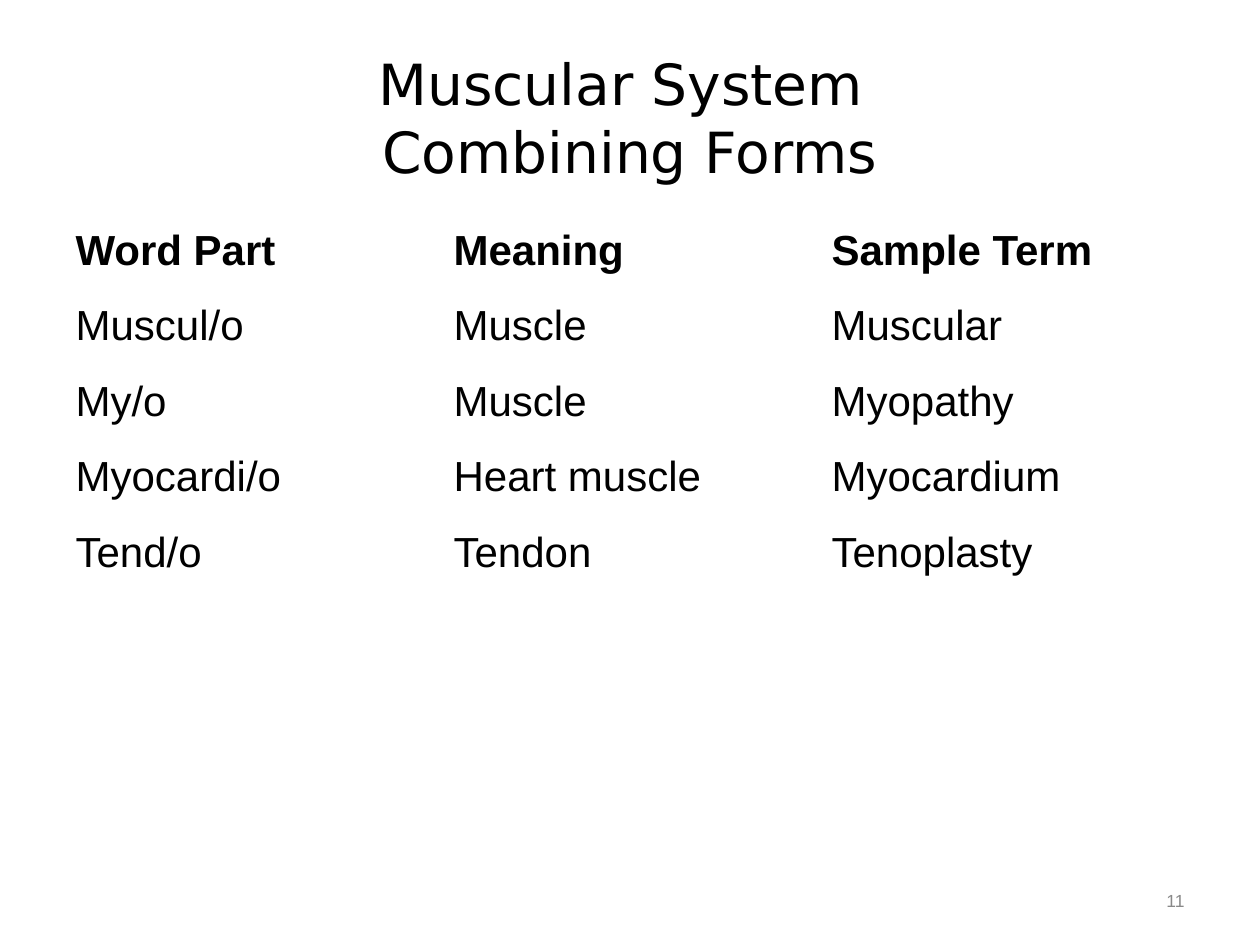
from pptx import Presentation
from pptx import util as u
from pptx.dml.color import RGBColor
from pptx.enum import text

BLACK = RGBColor(0x00, 0x00, 0x00)
GRAY = RGBColor(0x89, 0x89, 0x89)
BODY_FONT = "Arial"
TITLE_FONT = "DejaVu Sans"

TERMS = [
    ("Word Part", "Meaning", "Sample Term"),
    ("Muscul/o", "Muscle", "Muscular"),
    ("My/o", "Muscle", "Myopathy"),
    ("Myocardi/o", "Heart muscle", "Myocardium"),
    ("Tend/o", "Tendon", "Tenoplasty"),
]


def format_text(frame, font, size, color, align, bold=False):
    for para in frame.paragraphs:
        para.alignment = align
        for span in para.runs:
            span.font.name = font
            span.font.size = u.Pt(size)
            span.font.color.rgb = color
            span.font.bold = bold


def place_title(page, left, top, width, height):
    title = page.shapes.title
    title.left, title.top, title.width, title.height = left, top, width, height
    frame = title.text_frame
    frame.text = "Muscular System \vCombining Forms"
    frame.auto_size = text.MSO_AUTO_SIZE.NONE
    frame.vertical_anchor = text.MSO_ANCHOR.MIDDLE
    format_text(frame, TITLE_FONT, 32.4, BLACK, text.PP_ALIGN.CENTER)


def place_terms(page, left, top, width, height):
    table = page.shapes.add_table(
        len(TERMS), len(TERMS[0]), left, top, width, height
    ).table
    table.horz_banding = False
    table.first_row = False
    for row, words in enumerate(TERMS):
        for column, word in enumerate(words):
            cell = table.cell(row, column)
            cell.fill.background()
            cell.text_frame.text = word
            format_text(cell.text_frame, BODY_FONT, 24, BLACK,
                        text.PP_ALIGN.LEFT, bold=row == 0)


def place_page_number(page, left, top, width, height):
    frame = page.shapes.add_textbox(left, top, width, height).text_frame
    frame.word_wrap = True
    frame.vertical_anchor = text.MSO_ANCHOR.MIDDLE
    frame.text = "11"
    format_text(frame, BODY_FONT, 10, GRAY, text.PP_ALIGN.RIGHT)


def main():
    deck = Presentation()
    deck.slide_width, deck.slide_height = u.Cm(25.4), u.Cm(19.05)
    page = deck.slides.add_slide(deck.slide_layouts.get_by_name("Title Only"))
    margin = u.Cm(1.27)
    content_width = deck.slide_width - 2 * margin
    place_title(page, margin, u.Cm(0.76), content_width, u.Cm(3.18))
    place_terms(page, margin, u.Cm(4.45), content_width, u.Cm(7.62))
    number_width = u.Cm(1.42)
    place_page_number(page, deck.slide_width - margin - number_width,
                      u.Cm(17.4), number_width, u.Cm(1.52))
    deck.save("out.pptx")


if __name__ == "__main__":
    main()
